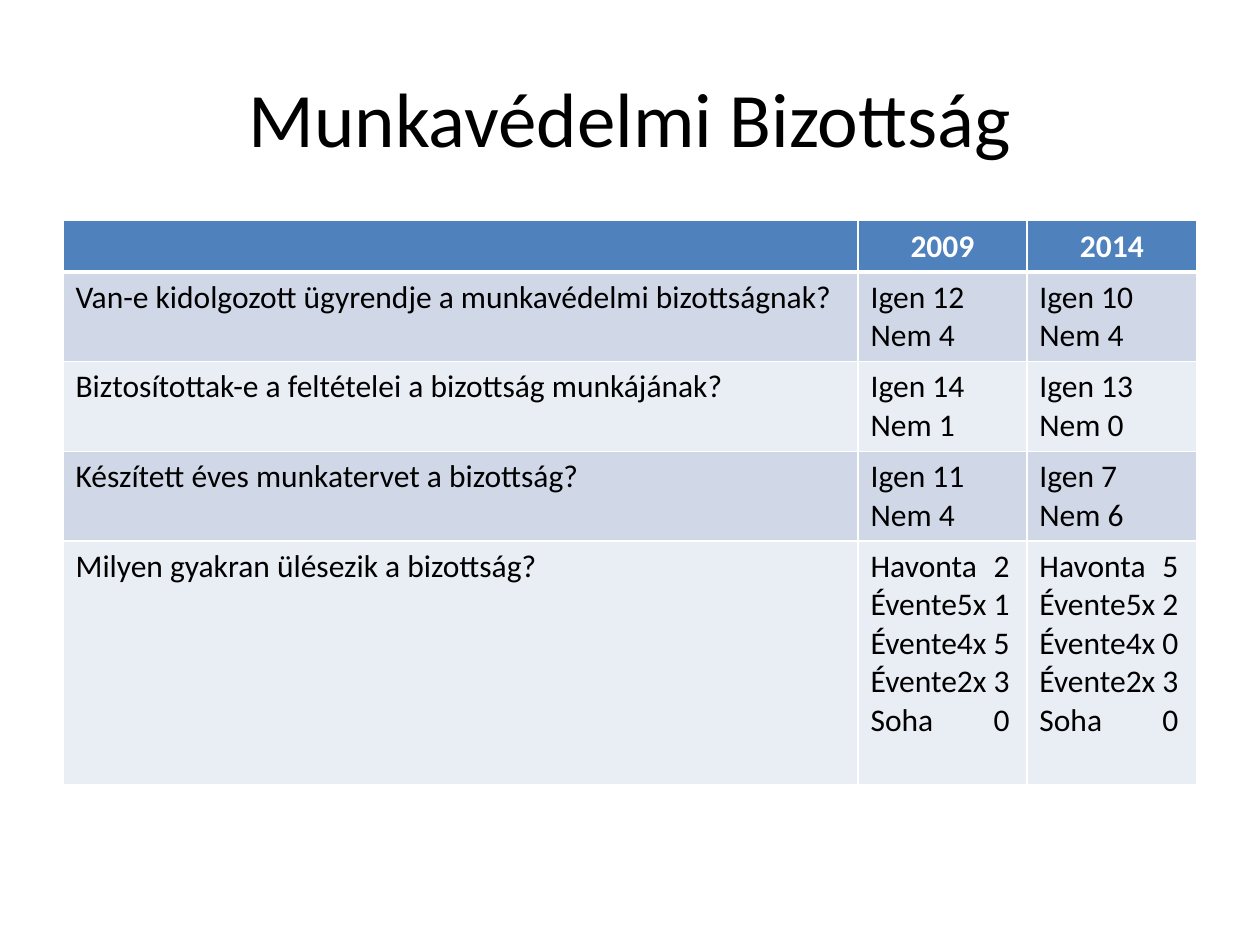
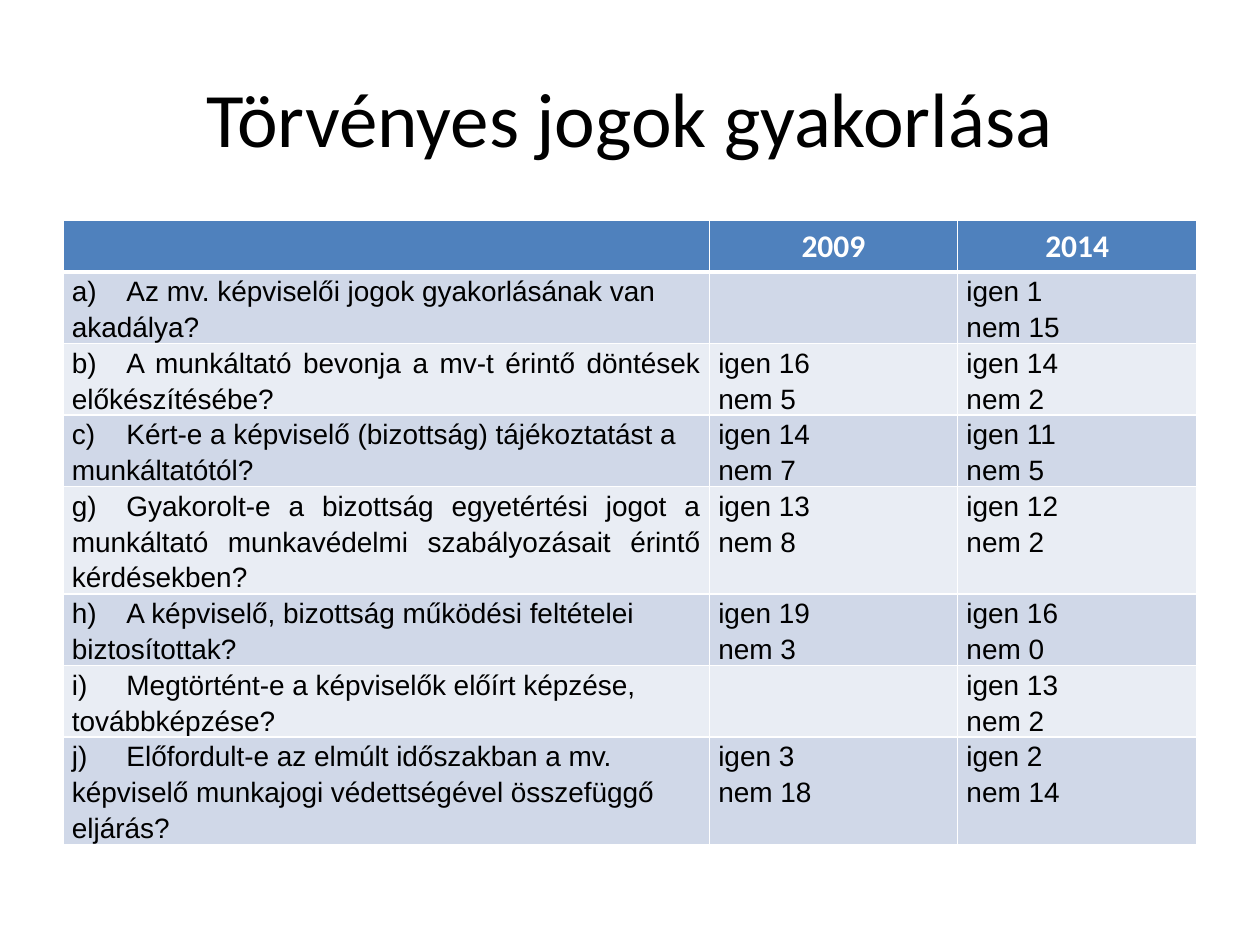
from dataclasses import dataclass

from lxml.etree import SubElement
from pptx import Presentation
from pptx.dml.color import RGBColor
from pptx.enum.text import MSO_ANCHOR, PP_ALIGN
from pptx.oxml.ns import qn
from pptx.util import Cm, Pt


@dataclass(frozen=True)
class Theme:
    ink: str = "000000"
    paper: str = "FFFFFF"
    head: str = "4F81BD"
    bands: tuple = ("D0D8E8", "E9EDF4")
    main: str = "Calibri"
    alt: str = "Arial"
    title: int = 44
    body: int = 18
    small: int = 16
    thin: int = 1
    thick: int = 3


T = Theme()
TITLE = (1.27, 0.76, 22.86, 3.18)
TABLE = (1.27, 4.45, 22.86)
HEAD = ("", "2009", "2014")
TOP = 1.03  # height of the heading row
LINE = 0.72  # height of one line of small text

# Each row: question, answers of 2009, answers of 2014
BOARD = [
    ("Van-e kidolgozott ügyrendje a munkavédelmi bizottságnak?",
     "Igen 12\nNem 4", "Igen 10\nNem 4"),
    ("Biztosítottak-e a feltételei a bizottság munkájának?",
     "Igen 14\nNem 1", "Igen 13\nNem 0"),
    ("Készített éves munkatervet a bizottság?",
     "Igen 11\nNem 4", "Igen 7\nNem 6"),
    ("Milyen gyakran ülésezik a bizottság?",
     "Havonta\t2\nÉvente5x\t1\nÉvente4x\t5\nÉvente2x\t3\nSoha\t0",
     "Havonta\t5\nÉvente5x\t2\nÉvente4x\t0\nÉvente2x\t3\nSoha\t0"),
]
RIGHTS = [
    ("a)\tAz mv. képviselői jogok gyakorlásának van akadálya?",
     "", "igen 1\nnem 15"),
    ("b)\tA munkáltató bevonja a mv-t érintő döntések előkészítésébe?",
     "igen 16\nnem 5", "igen 14\nnem 2"),
    ("c)\tKért-e a képviselő (bizottság) tájékoztatást a munkáltatótól?",
     "igen 14\nnem 7", "igen 11\nnem 5"),
    ("g)\tGyakorolt-e a bizottság egyetértési jogot a munkáltató "
     "munkavédelmi szabályozásait érintő kérdésekben?",
     "igen 13\nnem 8", "igen 12\nnem 2"),
    ("h)\tA képviselő, bizottság működési feltételei biztosítottak?",
     "igen 19\nnem 3", "igen 16\nnem 0"),
    ("i)\tMegtörtént-e a képviselők előírt képzése, továbbképzése?",
     "", "igen 13\nnem 2"),
    ("j)\tElőfordult-e az elmúlt időszakban a mv. képviselő munkajogi "
     "védettségével összefüggő eljárás?",
     "igen 3\nnem 18", "igen 2\nnem 14"),
]


def write(frame, text, size=T.body, font=T.main, color=T.ink, bold=False,
          align=PP_ALIGN.LEFT, space=None, tab=None):
    """Fill a text frame, one paragraph a line; tab is (position, side)."""
    frame.text = text
    for para in frame.paragraphs:
        para.alignment = align
        para.line_spacing = space
        if tab and "\t" in para.text:
            stops = SubElement(para._p.get_or_add_pPr(), qn("a:tabLst"))
            SubElement(stops, qn("a:tab"), pos=str(Cm(tab[0])), algn=tab[1])
        for style in (para.font, *(run.font for run in para.runs)):
            style.size = Pt(size)
            style.name = font
            style.bold = bold
            style.color.rgb = RGBColor.from_string(color)


def paint(cell, fill, top=T.thin, base=T.thin):
    """Draw the borders of a cell, then its fill."""
    props = cell._tc.get_or_add_tcPr()
    sides = {"lnL": T.thin, "lnR": T.thin, "lnT": top, "lnB": base}
    for side, width in sides.items():
        line = SubElement(props, qn(f"a:{side}"), w=str(Pt(width)))
        solid = SubElement(line, qn("a:solidFill"))
        SubElement(solid, qn("a:srgbClr"), val=T.paper)
    cell.fill.solid()
    cell.fill.fore_color.rgb = RGBColor.from_string(fill)


def add_title(slide, text, box):
    shape = slide.shapes.title
    shape.left, shape.top, shape.width, shape.height = map(Cm, box)
    shape.text_frame.vertical_anchor = MSO_ANCHOR.MIDDLE
    write(shape.text_frame, text, size=T.title, align=PP_ALIGN.CENTER)


def add_grid(slide, rows, box, cols, highs, pad=None, full=(), **form):
    """Place a table; pad is (side, top) inset, full lists justified rows."""
    left, top, width = box
    highs = [TOP, *highs]
    grid = slide.shapes.add_table(
        len(highs), len(cols), Cm(left), Cm(top), Cm(width),
        Cm(sum(highs))).table
    for col, share in zip(grid.columns, cols):
        col.width = Cm(width * share / sum(cols))
    for row, high in zip(grid.rows, highs):
        row.height = Cm(high)
    for cell, text in zip(grid.rows[0].cells, HEAD):
        paint(cell, T.head, base=T.thick)
        write(cell.text_frame, text, color=T.paper, bold=True,
              align=PP_ALIGN.CENTER)
    for num, texts in enumerate(rows, 1):
        align = PP_ALIGN.JUSTIFY if num in full else PP_ALIGN.LEFT
        for cell, text in zip(grid.rows[num].cells, texts):
            paint(cell, T.bands[(num - 1) % 2],
                  top=T.thick if num == 1 else T.thin)
            if pad:
                cell.margin_left = cell.margin_right = Cm(pad[0])
                cell.margin_top = cell.margin_bottom = Cm(pad[1])
            write(cell.text_frame, text, align=align, **form)


def add_page(deck, title, rows, **form):
    slide = deck.slides.add_slide(deck.slide_layouts[5])
    add_title(slide, title, TITLE)
    add_grid(slide, rows, TABLE, **form)


def main():
    deck = Presentation()
    deck.slide_width, deck.slide_height = Cm(25.4), Cm(19.05)
    add_page(deck, "Munkavédelmi Bizottság", BOARD,
             cols=(6.31, 1.34, 1.35), highs=(1.81, 1.81, 1.81, 4.9),
             tab=(2.8, "r"))
    add_page(deck, "Törvényes jogok gyakorlása", RIGHTS,
             cols=(5.13, 1.97, 1.9),
             highs=[LINE * n for n in (2, 2, 2, 3, 2, 2, 3)],
             pad=(0.18, 0), full=(2, 4), size=T.small, font=T.alt,
             space=1.15, tab=(1.1, "l"))
    deck.save("out.pptx")


if __name__ == "__main__":
    main()
